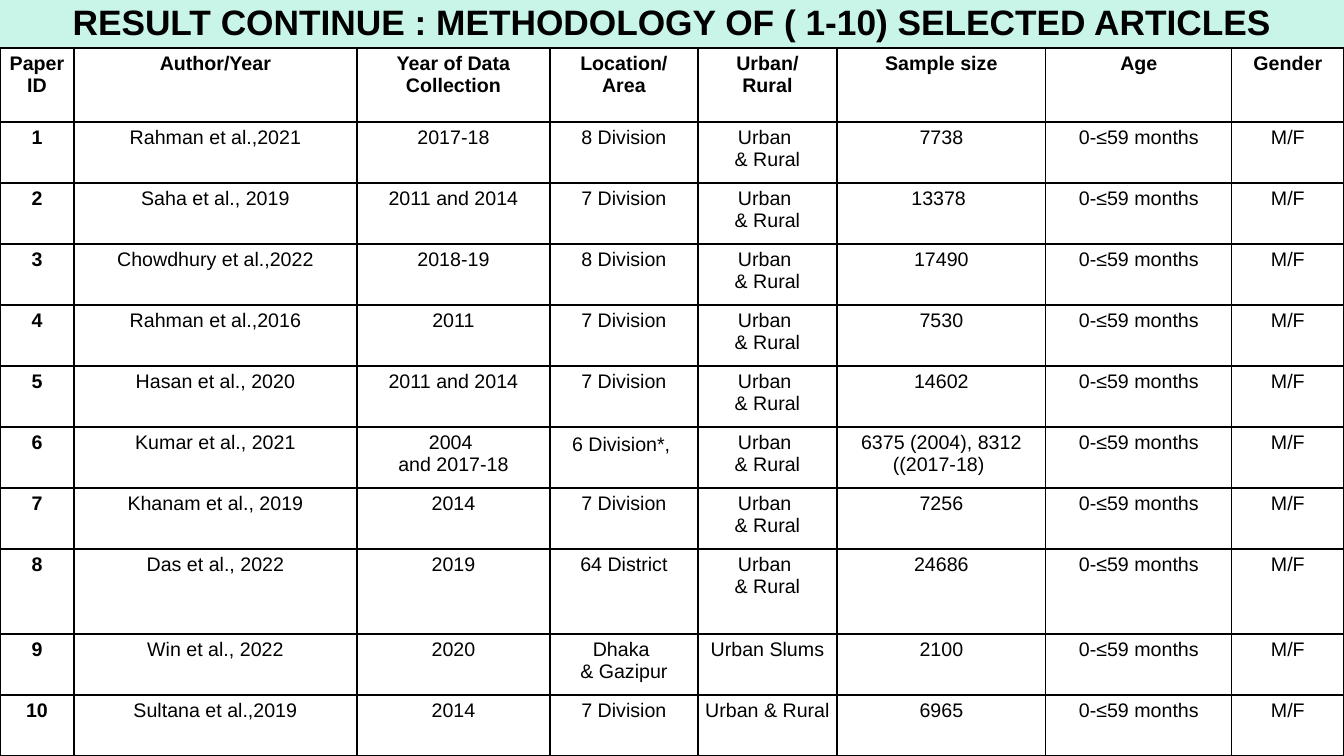
from lxml import etree
from pptx import Presentation
from pptx.dml.color import RGBColor
from pptx.enum.text import MSO_ANCHOR, PP_ALIGN
from pptx.oxml.ns import qn
from pptx.util import Emu, Pt

CENTER, MIDDLE = PP_ALIGN.CENTER, MSO_ANCHOR.MIDDLE
BLACK = RGBColor(0x00, 0x00, 0x00)
WHITE = RGBColor(0xFF, 0xFF, 0xFF)
MINT = RGBColor(0xC8, 0xF5, 0xE8)
FONT = "Arial"

TITLE = "RESULT CONTINUE : METHODOLOGY OF ( 1-10) SELECTED ARTICLES"
HEADERS = ["Paper ID", "Author/Year", "Year of Data Collection", "Location/\nArea",
           "Urban/\nRural", "Sample size", "Age", "Gender"]
BOTH = "Urban \n& Rural"
AGE, GENDER = "0-≤59 months", "M/F"
STUDIES = [  # author, collection year, location, urban/rural, sample size
    ("Rahman et al.,2021", "2017-18", "8 Division", BOTH, "7738"),
    ("Saha et al., 2019", "2011 and 2014", "7 Division", BOTH, "13378 "),
    ("Chowdhury et al.,2022", "2018-19", "8 Division", BOTH, "17490"),
    ("Rahman et al.,2016", "2011", "7 Division", BOTH, "7530"),
    ("Hasan et al., 2020", "2011 and 2014", "7 Division", BOTH, "14602"),
    ("Kumar et al., 2021", "2004 \nand 2017-18", "6 Division*, ", BOTH,
     "6375 (2004), 8312 ((2017-18) "),
    ("Khanam et al., 2019", "2014", "7 Division", BOTH, "7256"),
    ("Das et al., 2022", "2019", "64 District", BOTH, "24686"),
    ("Win et al., 2022", "2020", "Dhaka \n& Gazipur", "Urban Slums", "2100"),
    ("Sultana et al.,2019", "2014", "7 Division", "Urban & Rural", "6965"),
]

SLIDE_W, SLIDE_H, TITLE_H = 1344, 756, 48
COL_WIDTHS = [74, 283, 193, 148, 139, 209, 186, 112]
HEADER_H, ROW_H, TALL_ROW_H, TALL_ROW = 74, 61, 85, 8
CELL_PAD = 7


def px(n):
    return Emu(round(n * 914400 / 100.8))


def format_text(tf, size, bold):
    for p in tf.paragraphs:
        p.alignment = CENTER
        for r in p.runs:
            r.font.name, r.font.size, r.font.bold = FONT, Pt(size), bold
            r.font.color.rgb = BLACK


def add_borders(cell):
    tcPr = cell._tc.get_or_add_tcPr()
    for i, side in enumerate(("a:lnL", "a:lnR", "a:lnT", "a:lnB")):
        ln = etree.Element(qn(side), w=str(Pt(1)))
        fill = etree.SubElement(ln, qn("a:solidFill"))
        etree.SubElement(fill, qn("a:srgbClr"), val=str(BLACK))
        tcPr.insert(i, ln)


def add_title(s):
    title = s.shapes.title
    title.left, title.top, title.width, title.height = 0, 0, px(SLIDE_W), px(TITLE_H)
    title.fill.solid()
    title.fill.fore_color.rgb = MINT
    tf = title.text_frame
    tf.text = TITLE
    tf.vertical_anchor = MIDDLE
    tf.margin_top = tf.margin_bottom = 0
    tf.paragraphs[0].line_spacing = 0.9
    format_text(tf, 25.2, True)


def add_study_table(s):
    rows = [HEADERS] + [(str(n), *study, AGE, GENDER) for n, study in enumerate(STUDIES, 1)]
    heights = [HEADER_H] + [ROW_H] * len(STUDIES)
    heights[TALL_ROW] = TALL_ROW_H
    table = s.shapes.add_table(len(rows), len(HEADERS), 0, px(TITLE_H),
                               px(SLIDE_W), px(sum(heights))).table
    table.horz_banding = False
    for column, width in zip(table.columns, COL_WIDTHS):
        column.width = px(width)
    for i, (row, height) in enumerate(zip(rows, heights)):
        table.rows[i].height = px(height)
        for j, text in enumerate(row):
            cell = table.cell(i, j)
            cell.text_frame.text = text
            cell.margin_left = cell.margin_right = px(CELL_PAD)
            cell.fill.solid()
            cell.fill.fore_color.rgb = WHITE
            add_borders(cell)
            format_text(cell.text_frame, 14, i == 0 or j == 0)
    starred = table.cell(6, 3).text_frame.paragraphs[0]
    starred.line_spacing, starred.space_after = 1.07, Pt(8)


def main():
    prs = Presentation()
    prs.slide_width, prs.slide_height = px(SLIDE_W), px(SLIDE_H)
    s = prs.slides.add_slide(prs.slide_layouts[5])
    add_title(s)
    add_study_table(s)
    prs.save("out.pptx")


if __name__ == "__main__":
    main()
